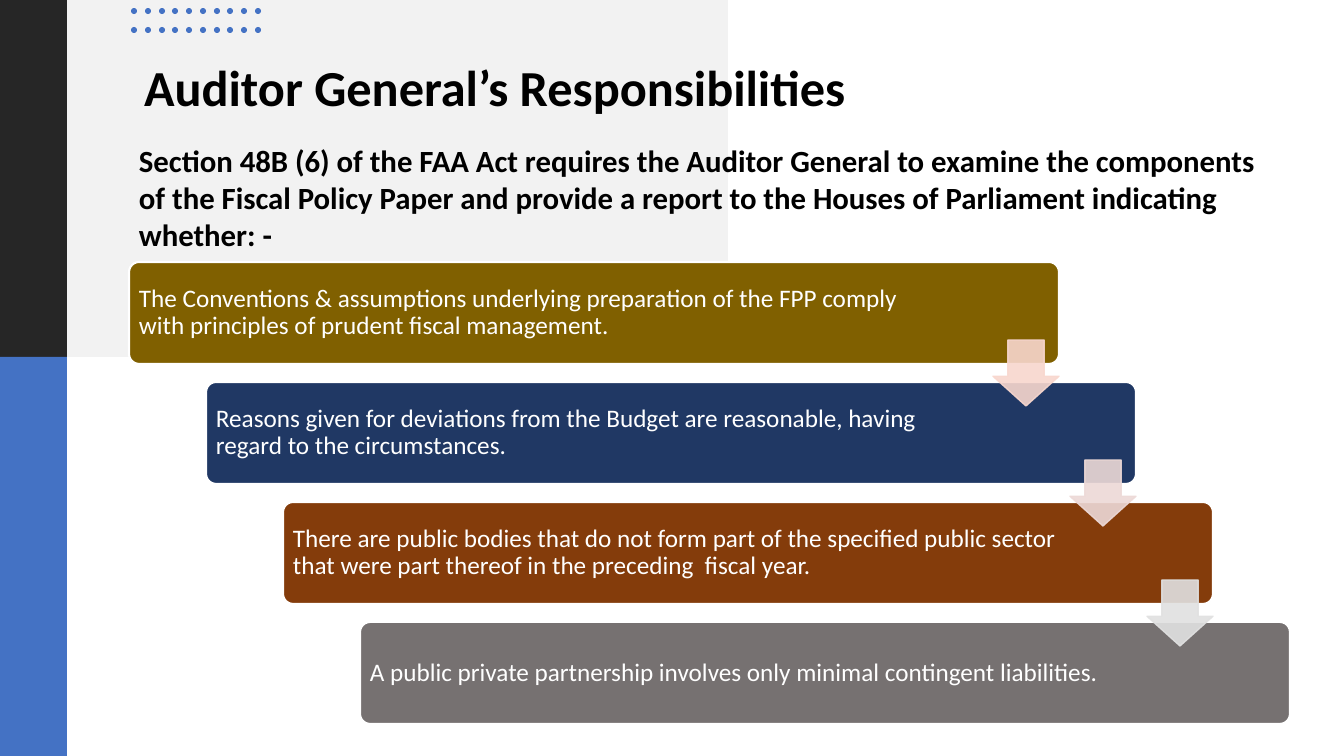
from lxml.etree import SubElement
from pptx import Presentation
from pptx.dml.color import RGBColor
from pptx.enum.shapes import MSO_SHAPE
from pptx.enum.text import MSO_ANCHOR, MSO_AUTO_SIZE, PP_ALIGN
from pptx.oxml.ns import qn
from pptx.util import Emu, Pt

TITLE_ONLY = 5
BLUE = "4472C4"
INTRO = ("Section 48B (6) of the FAA Act requires the Auditor General to examine the "
         "components of the Fiscal Policy Paper and provide a report to the Houses of "
         "Parliament indicating whether: -")
# Card text, card colour, colour of the arrow leading to the next card
CARDS = [
    ("The Conventions & assumptions underlying preparation of the FPP comply "
     "with principles of prudent fiscal management.", "806000", "F8D7CE"),
    ("Reasons given for deviations from the Budget are reasonable, having "
     "regard to the circumstances.", "203864", "EDD9D7"),
    ("There are public bodies that do not form part of the specified public sector "
     "that were part thereof in the preceding  fiscal year.", "843C0B", "E1E1E1"),
    ("A public private partnership involves only minimal contingent liabilities.",
     "767171", None),
]


def px(length):
    """Turn px, 100.8 to the inch, into EMU."""
    return Emu(round(length * 914400 / 100.8))


def colour(code):
    return RGBColor.from_string(code)


def set_opacity(fill_owner, percent):
    """Make every solid fill under an XML element partly transparent."""
    for rgb in fill_owner.iter(qn("a:srgbClr")):
        SubElement(rgb, qn("a:alpha")).set("val", str(percent * 1000))


class SlideBuilder:
    font_name = "Calibri"

    def __init__(self, page):
        self.page = page

    def place(self, item, x, y, width, height):
        bounds = dict(left=px(x), top=px(y), width=px(width), height=px(height))
        for name, value in bounds.items():
            setattr(item, name, value)

    def fill_text(self, item, text, size, ink, bold=False, spacing=1.0, **frame_format):
        frame = item.text_frame
        frame_format = dict(word_wrap=True, auto_size=MSO_AUTO_SIZE.NONE) | frame_format
        for name, value in frame_format.items():
            setattr(frame, name, value)
        para = frame.paragraphs[0]
        para.alignment = PP_ALIGN.LEFT
        para.line_spacing = spacing
        span = para.add_run()
        span.text = text
        font_format = dict(name=self.font_name, size=Pt(size), bold=bold)
        for name, value in font_format.items():
            setattr(span.font, name, value)
        span.font.color.rgb = colour(ink)

    def title(self, text, *bounds):
        title = self.page.shapes.title
        self.place(title, *bounds)
        self.fill_text(title, text, 36, "000000", bold=True, spacing=0.9,
                       vertical_anchor=MSO_ANCHOR.MIDDLE)
        # Bring the title in front of the panel drawn before it
        title.element.getparent().append(title.element)

    def text(self, text, size, *bounds):
        box = self.page.shapes.add_textbox(*map(px, bounds))
        self.fill_text(box, text, size, "000000", bold=True)

    def shape(self, kind, fill, *bounds, line=None, line_width=1, adjustments=()):
        shape = self.page.shapes.add_shape(kind, *map(px, bounds))
        shape.shadow.inherit = False
        shape.fill.solid()
        shape.fill.fore_color.rgb = colour(fill)
        if line:
            shape.line.color.rgb = colour(line)
            shape.line.width = Pt(line_width)
        else:
            shape.line.fill.background()
        for index, value in enumerate(adjustments):
            shape.adjustments[index] = value
        return shape

    def card(self, text, fill, *bounds):
        card = self.shape(MSO_SHAPE.ROUNDED_RECTANGLE, fill, *bounds,
                          line="FFFFFF", line_width=1.5, adjustments=[0.1])
        self.fill_text(card, text, 18, "FFFFFF", spacing=0.9,
                       vertical_anchor=MSO_ANCHOR.MIDDLE,
                       margin_left=px(7), margin_right=px(146),
                       margin_top=px(7), margin_bottom=px(7))

    def arrow(self, fill, *bounds):
        arrow = self.shape(MSO_SHAPE.DOWN_ARROW, fill, *bounds,
                           line=fill, adjustments=[0.55, 0.45])
        set_opacity(arrow.element.spPr, 90)


def main():
    deck = Presentation()
    deck.slide_width, deck.slide_height = px(1344), px(756)
    slide = SlideBuilder(deck.slides.add_slide(deck.slide_layouts[TITLE_ONLY]))

    slide.shape(MSO_SHAPE.RECTANGLE, "F2F2F2", 0, 0, 728, 357)
    slide.title("Auditor General’s Responsibilities", 134, 55, 827, 70)
    slide.shape(MSO_SHAPE.RECTANGLE, "262626", 0, 0, 67, 357)
    for column in range(10):
        for y in (8, 27):
            slide.shape(MSO_SHAPE.OVAL, BLUE, 131 + round(column * 124 / 9), y, 6, 6)
    slide.shape(MSO_SHAPE.RECTANGLE, BLUE, 0, 357, 67, 399)
    slide.text(INTRO, 22, 129, 137, 1139, 122)

    corners = [(129 + 77 * step, 262 + 120 * step) for step in range(len(CARDS))]
    for (text, fill, _), (x, y) in zip(CARDS, corners):
        slide.card(text, fill, x, y, 930, 102)
    for (_, _, fill), (x, y) in zip(CARDS, corners):
        if fill:
            slide.arrow(fill, x + 864, y + 78, 66, 66)

    deck.save("out.pptx")


if __name__ == "__main__":
    main()
